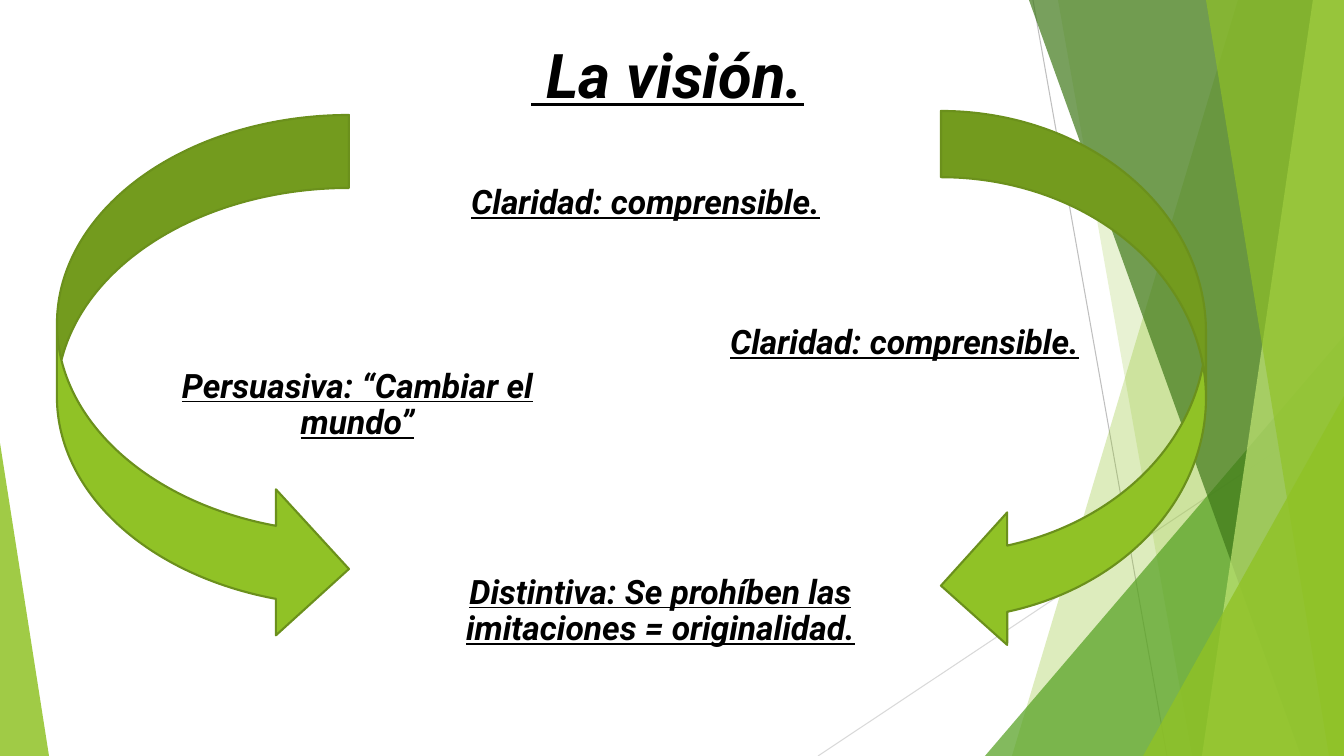
"""Build the slide "La visión" with two curved arrows and a green faceted background."""
import lxml.etree
import pptx
import pptx.dml.color
import pptx.enum.shapes
import pptx.enum.text
import pptx.oxml.ns
import pptx.util

PX = 914400 / 100.8
WIDTH, HEIGHT = 1344, 756
THEME = {
    "font": "Roboto", "title_size": 44, "body_size": 24, "text": "000000",
    "lime": "90C226", "green": "54A021", "forest": "3F7819", "pale": "C0E474",
    "outline": "6B901C", "dark_rule": "BFBFBF", "light_rule": "D9D9D9",
}
SHAPES = pptx.enum.shapes.MSO_SHAPE


def paint(shape, color, opacity=100):
    """Give a shape a flat fill without outline or shadow."""
    shape.shadow.inherit = False
    shape.fill.solid()
    shape.fill.fore_color.rgb = pptx.dml.color.RGBColor.from_string(THEME[color])
    shape.line.fill.background()
    if opacity < 100:
        tint = shape.element.spPr.find(".//" + pptx.oxml.ns.qn("a:srgbClr"))
        alpha = lxml.etree.SubElement(tint, pptx.oxml.ns.qn("a:alpha"))
        alpha.set("val", str(opacity * 1000))


def write(box, text, size):
    """Write one centred, bold, italic, underlined paragraph."""
    frame = box.text_frame
    frame.word_wrap = True
    frame.auto_size = pptx.enum.text.MSO_AUTO_SIZE.NONE
    frame.vertical_anchor = pptx.enum.text.MSO_ANCHOR.MIDDLE
    para = frame.paragraphs[0]
    para.alignment = pptx.enum.text.PP_ALIGN.CENTER
    para.line_spacing = 0.9
    para.space_before = pptx.util.Pt(0)
    span = para.add_run()
    span.text = text
    span.font.name = THEME["font"]
    span.font.size = pptx.util.Pt(THEME[size])
    span.font.bold = span.font.italic = span.font.underline = True
    span.font.color.rgb = pptx.dml.color.RGBColor.from_string(THEME["text"])


deck = pptx.Presentation()
deck.slide_width, deck.slide_height = round(WIDTH * PX), round(HEIGHT * PX)
page = deck.slides.add_slide(deck.slide_layouts.get_by_name("Title Only"))

rules = [
    ((1033, 0, 1167, HEIGHT), "dark_rule"),
    ((WIDTH, 406, 818, HEIGHT), "light_rule"),
]
for ends, color in rules:
    rule = page.shapes.add_connector(
        pptx.enum.shapes.MSO_CONNECTOR.STRAIGHT, *[round(end * PX) for end in ends])
    rule.line.color.rgb = pptx.dml.color.RGBColor.from_string(THEME[color])
    rule.line.width = pptx.util.Pt(0.75)
    lxml.etree.SubElement(rule.element.spPr, pptx.oxml.ns.qn("a:effectLst"))

facets = [
    ("wedge", (1238, 1012), "lime", 30),
    ("wedge", (1058, 1192), "lime", 20),
    ("triangle", (985, 336, WIDTH, 1), "green", 72),
    ("wedge", (1029, 1301), "forest", 70),
    ("wedge", (1313, 1202), "pale", 70),
    ("wedge", (1206, 1329), "lime", 65),
    ("triangle", (1143, 396, WIDTH, 1), "lime", 80),
    ("triangle", (0, 443, 49, 0), "lime", 85),
]
for kind, geometry, color, opacity in facets:
    if kind == "wedge":
        top_x, bottom_x = geometry
        outline = page.shapes.build_freeform(top_x, 0, scale=PX)
        outline.add_line_segments([(WIDTH, 0), (WIDTH, HEIGHT), (bottom_x, HEIGHT)])
        facet = outline.convert_to_shape()
    else:
        left, top, right, apex = geometry
        frame = (left, top, right - left, HEIGHT - top)
        facet = page.shapes.add_shape(
            SHAPES.ISOSCELES_TRIANGLE, *[round(length * PX) for length in frame])
        facet.adjustments[0] = apex
    paint(facet, color, opacity)

title = page.shapes.title
title.left, title.top, title.width, title.height = [
    round(length * PX) for length in (20, 12, 1295, 133)]
write(title, " La visión.", "title_size")

arrows = [
    (SHAPES.CURVED_RIGHT_ARROW, (57, 115, 292, 527)),
    (SHAPES.CURVED_LEFT_ARROW, (941, 111, 265, 541)),
]
for kind, frame in arrows:
    arrow = page.shapes.add_shape(kind, *[round(length * PX) for length in frame])
    paint(arrow, "lime")
    arrow.line.color.rgb = pptx.dml.color.RGBColor.from_string(THEME["outline"])
    arrow.line.width = pptx.util.Pt(1.5)

traits = [
    (437, 137, "Claridad: comprensible."),
    (149, 339, "Persuasiva: “Cambiar el mundo”"),
    (452, 545, "Distintiva: Se prohíben las imitaciones = originalidad."),
    (696, 277, "Claridad: comprensible."),
]
for left, top, text in traits:
    box = page.shapes.add_textbox(*[round(length * PX) for length in (left, top, 417, 133)])
    write(box, text, "body_size")

deck.save("out.pptx")
